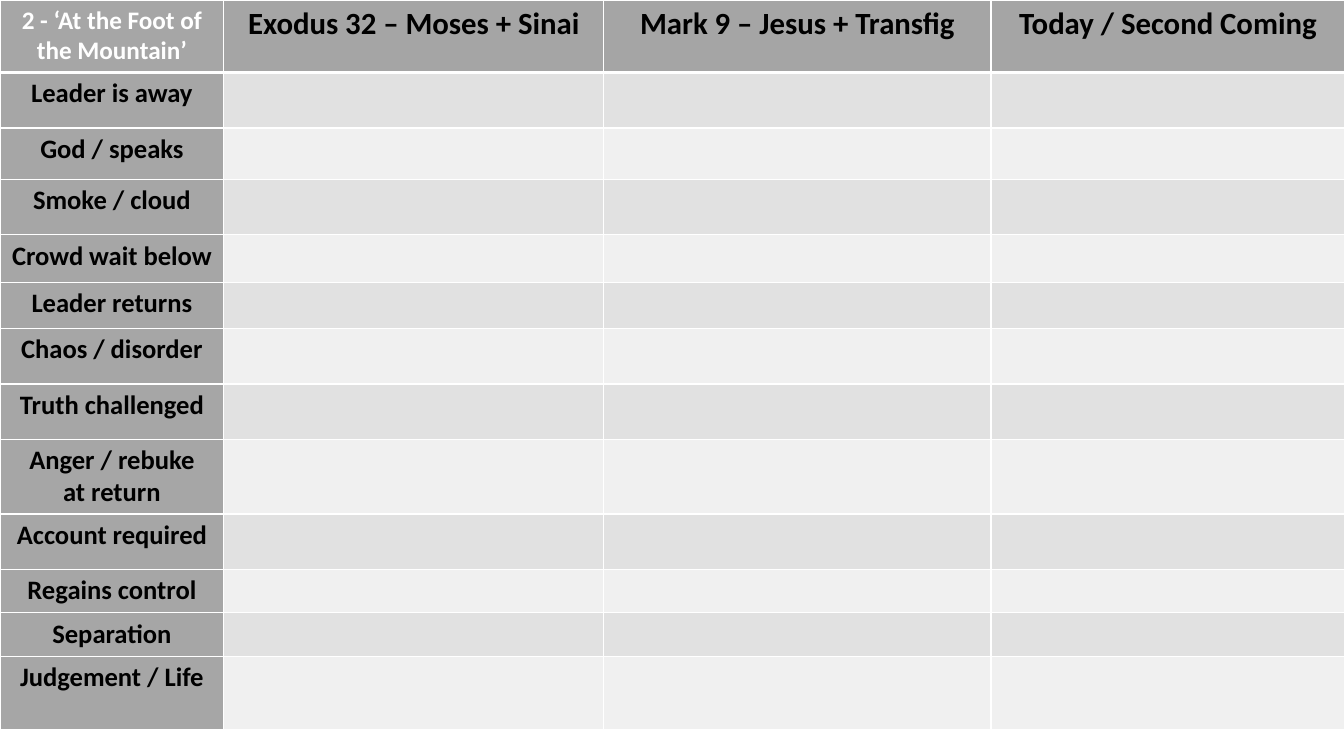
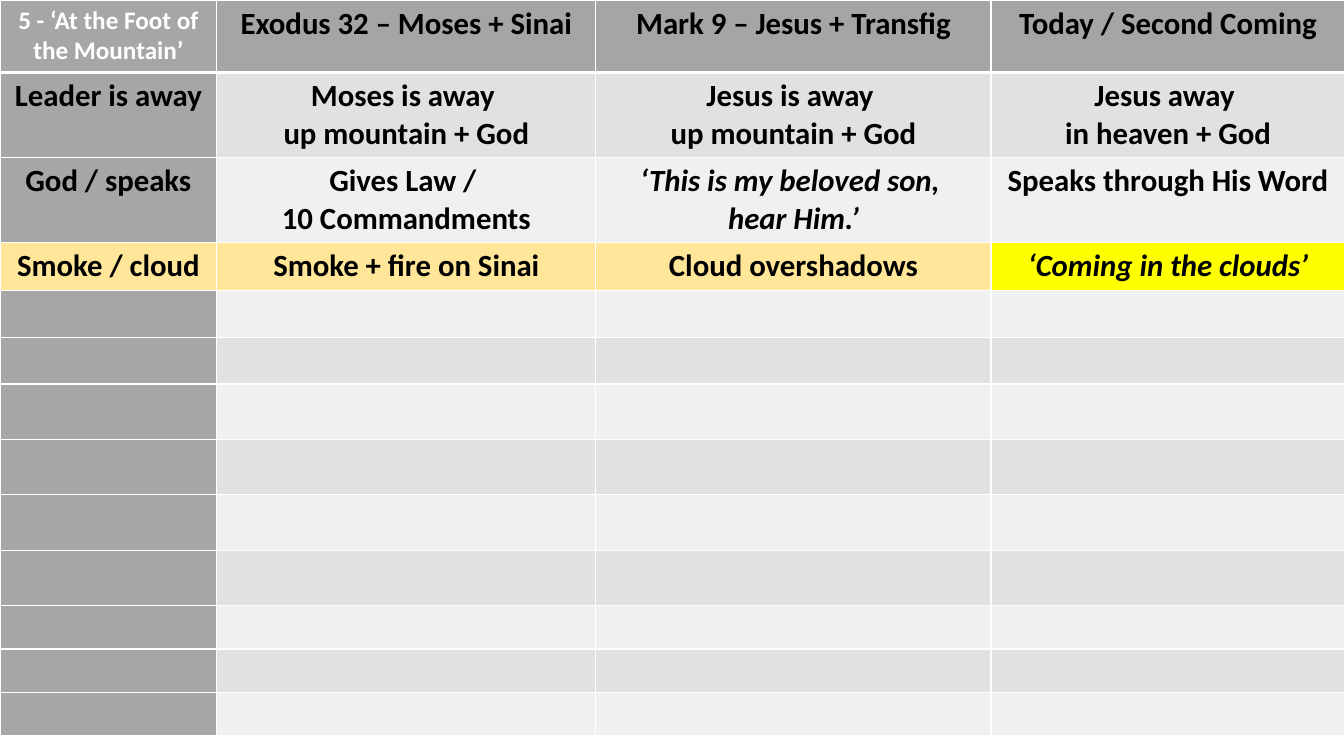
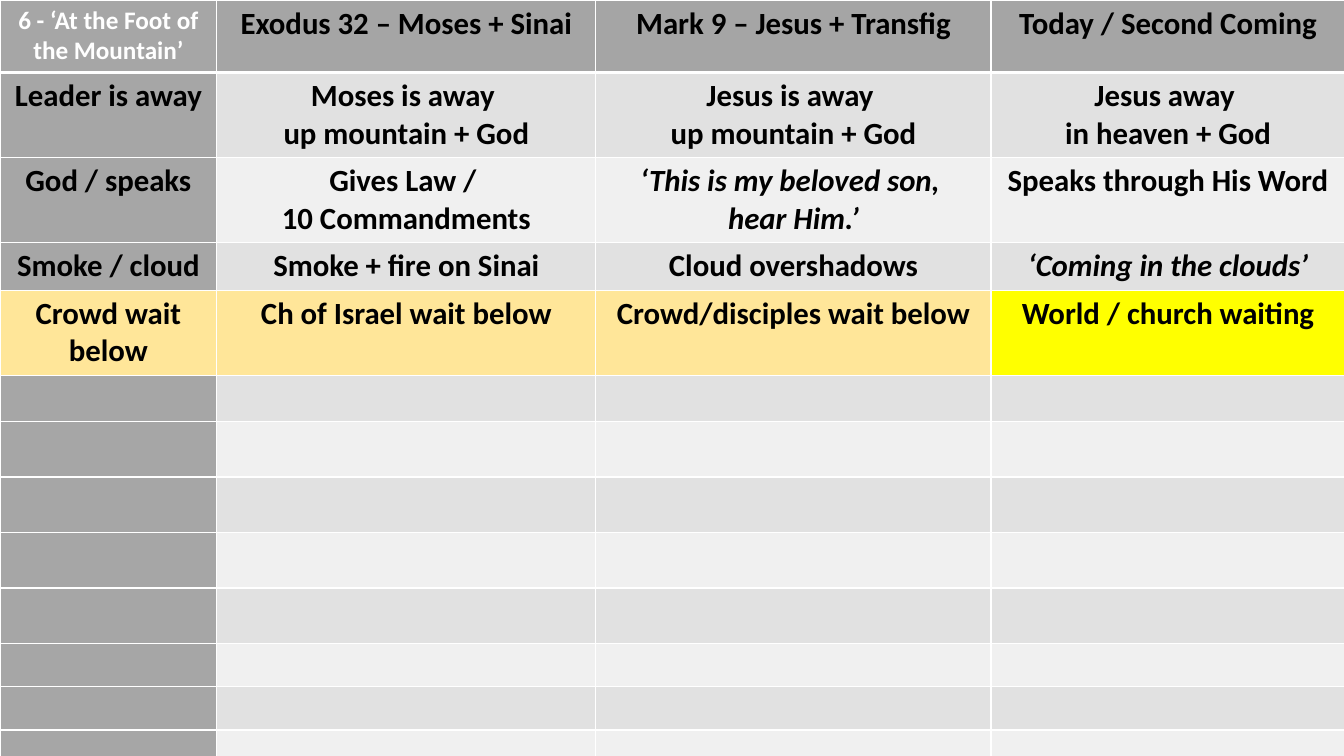
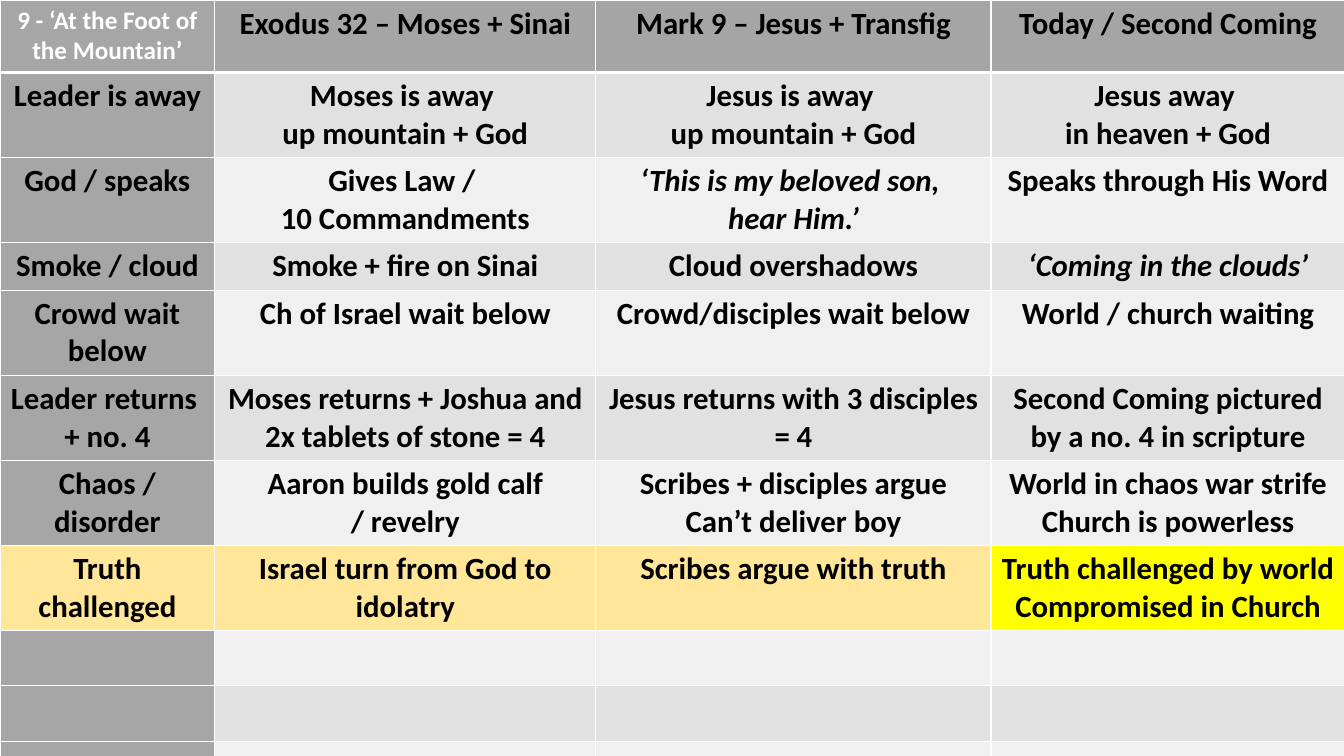
from dataclasses import dataclass

from lxml import etree
from pptx import Presentation
from pptx.dml.color import RGBColor
from pptx.enum.text import PP_ALIGN
from pptx.oxml.ns import qn
from pptx.util import Inches, Pt

CENTER = PP_ALIGN.CENTER
FONT = "Calibri"
BLANK_LAYOUT = 6
ROW_COUNT = 13
COLORS = {
    "white": "FFFFFF",
    "black": "000000",
    "corner": "A6A6A6",
    "heading": "A5A5A5",
    "label": "A6A6A6",
    "odd": "E1E1E1",
    "even": "F0F0F0",
    "current": "FFE699",
    "today": "FFFF00",
}
TITLE_SIZE = 18
BODY_SIZE = 22
HEADINGS = (
    "Exodus 32 – Moses + Sinai",
    "Mark 9 – Jesus + Transfig",
    "Today / Second Coming",
)


@dataclass(frozen=True)
class Theme:
    label: str
    exodus: str = ""
    mark: str = ""
    today: str = ""

    def texts(self) -> tuple[str, ...]:
        return self.label, self.exodus, self.mark, self.today


@dataclass(frozen=True)
class Stage:
    number: int
    widths: tuple[float, ...]
    heights: tuple[float, ...]
    themes: tuple[Theme, ...]
    label_size: int = BODY_SIZE
    highlights_last: bool = True


OVERVIEW = tuple(
    Theme(label)
    for label in (
        "Leader is away",
        "God / speaks",
        "Smoke / cloud",
        "Crowd wait below",
        "Leader returns",
        "Chaos / disorder",
        "Truth challenged",
        "Anger / rebuke\nat return",
        "Account required",
        "Regains control",
        "Separation",
        "Judgement / Life",
    )
)
THEMES = (
    Theme(
        "Leader is away",
        "Moses is away \nup mountain + God",
        "Jesus is away \nup mountain + God",
        "Jesus away \nin heaven + God",
    ),
    Theme(
        "God / speaks",
        "Gives Law / \n10 Commandments",
        "‘This is my beloved son, \nhear Him.’",
        "Speaks through His Word",
    ),
    Theme(
        "Smoke / cloud",
        "Smoke + fire on Sinai",
        "Cloud overshadows",
        "‘Coming in the clouds’",
    ),
    Theme(
        "Crowd wait below",
        "Ch of Israel wait below",
        "Crowd/disciples wait below",
        "World / church waiting",
    ),
    Theme(
        "Leader returns \n+ no. 4",
        "Moses returns + Joshua and \n2x tablets of stone = 4",
        "Jesus returns with 3 disciples = 4",
        "Second Coming pictured by a no. 4 in scripture",
    ),
    Theme(
        "Chaos / disorder",
        "Aaron builds gold calf\n/ revelry",
        "Scribes + disciples argue\nCan’t deliver boy",
        "World in chaos war strife\nChurch is powerless",
    ),
    Theme(
        "Truth challenged",
        "Israel turn from God to idolatry",
        "Scribes argue with truth",
        "Truth challenged by world\nCompromised in Church",
    ),
)
STAGES = (
    Stage(
        2,
        (2.22, 3.77, 3.84, 3.51),
        (0.72, 0.55, 0.51, 0.55, 0.47, 0.46, 0.55, 0.55, 0.55, 0.55, 0.43, 0.43, 0.73),
        OVERVIEW,
        label_size=19,
        highlights_last=False,
    ),
    Stage(
        5,
        (2.15, 3.76, 3.92, 3.51),
        (0.72, 0.44, 0.43, 0.45, 0.47, 0.46, 0.55, 0.55, 0.55, 0.55, 0.43, 0.43, 0.43),
        THEMES[:3],
    ),
    Stage(
        6,
        (2.15, 3.76, 3.92, 3.51),
        (0.72, 0.45, 0.41, 0.42, 0.4, 0.46, 0.55, 0.55, 0.55, 0.55, 0.43, 0.43, 0.43),
        THEMES[:4],
    ),
    Stage(
        9,
        (2.13, 3.78, 3.92, 3.51),
        (0.72, 0.44, 0.4, 0.41, 0.4, 0.46, 0.51, 0.55, 0.55, 0.55, 0.43, 0.43, 0.43),
        THEMES,
    ),
)


def set_borders(cell, top: float, bottom: float) -> None:
    properties = cell._tc.get_or_add_tcPr()
    for tag, width in (("a:lnL", 1), ("a:lnR", 1), ("a:lnT", top), ("a:lnB", bottom)):
        line = etree.SubElement(properties, qn(tag), w=str(Pt(width)))
        fill = etree.SubElement(line, qn("a:solidFill"))
        etree.SubElement(fill, qn("a:srgbClr"), val=COLORS["white"])


def write(cell, text: str, size: int, color: str) -> None:
    for index, line in enumerate(text.split("\n")):
        frame = cell.text_frame
        paragraph = frame.add_paragraph() if index else frame.paragraphs[0]
        paragraph.alignment = CENTER
        run = paragraph.add_run()
        run.text = line
        run.font.name = FONT
        run.font.size = Pt(size)
        run.font.bold = True
        run.font.italic = text.startswith("‘")
        run.font.color.rgb = RGBColor.from_string(COLORS[color])


def fill_name(stage: Stage, row: int, column: int) -> str:
    if row == 0:
        return "heading" if column else "corner"
    if stage.highlights_last and row == len(stage.themes):
        return "today" if column == 3 else "current"
    if column == 0:
        return "label"
    return "odd" if row % 2 else "even"


def draw_stage(slide, stage: Stage) -> None:
    table = slide.shapes.add_table(
        ROW_COUNT,
        len(stage.widths),
        Inches(0),
        Inches(0),
        Inches(sum(stage.widths)),
        Inches(sum(stage.heights)),
    ).table
    table.horz_banding = False
    for column, width in zip(table.columns, stage.widths):
        column.width = Inches(width)
    for row, height in zip(table.rows, stage.heights):
        row.height = Inches(height)

    title = f"{stage.number} - ‘At the Foot of the Mountain’"
    rows = [(title, *HEADINGS), *(theme.texts() for theme in stage.themes)]
    for r in range(ROW_COUNT):
        texts = rows[r] if r < len(rows) else ("",) * len(stage.widths)
        for c, text in enumerate(texts):
            cell = table.cell(r, c)
            set_borders(cell, top=3 if r == 1 else 1, bottom=3 if r == 0 else 1)
            cell.fill.solid()
            cell.fill.fore_color.rgb = RGBColor.from_string(COLORS[fill_name(stage, r, c)])
            if not text:
                continue
            if r == 0 and c == 0:
                write(cell, text, TITLE_SIZE, "white")
            else:
                write(cell, text, BODY_SIZE if r == 0 or c else stage.label_size, "black")


def main() -> None:
    deck = Presentation()
    deck.slide_width = Inches(13.33)
    deck.slide_height = Inches(7.5)
    for stage in STAGES:
        draw_stage(deck.slides.add_slide(deck.slide_layouts[BLANK_LAYOUT]), stage)
    deck.save("out.pptx")


if __name__ == "__main__":
    main()
